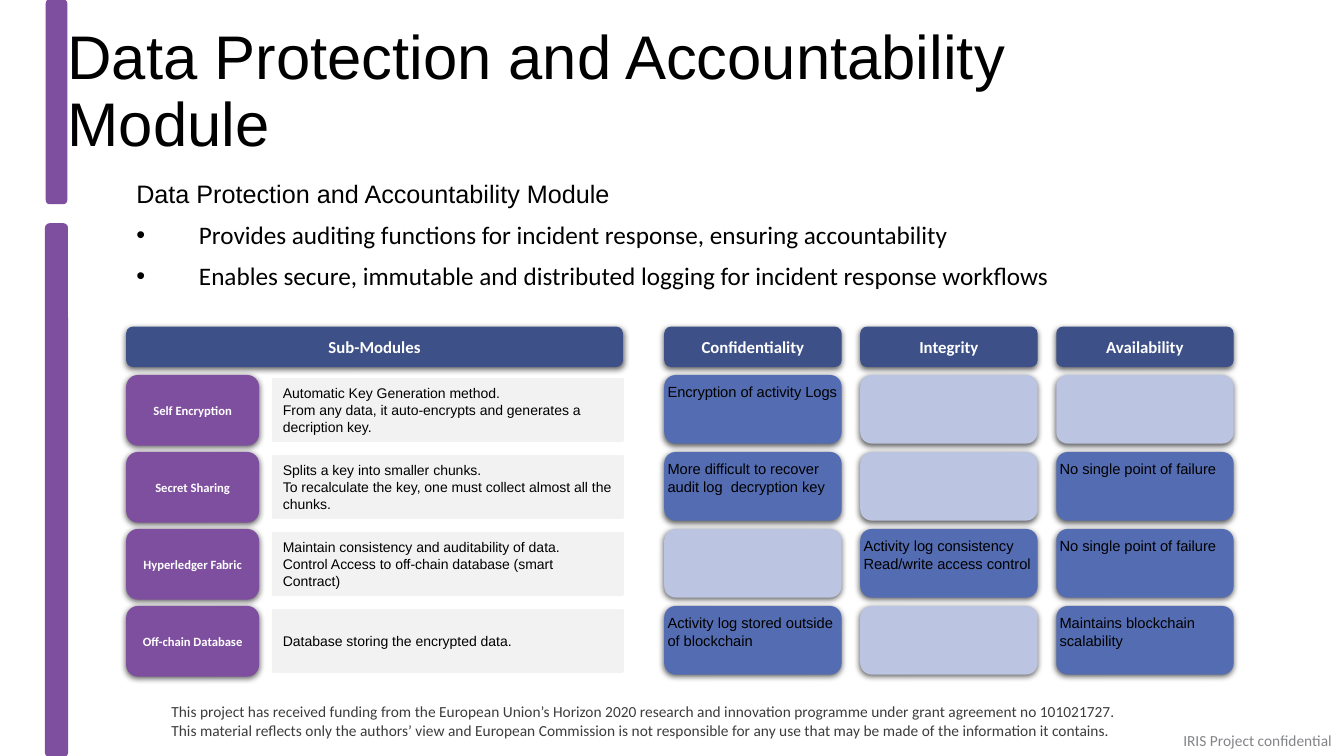
from lxml import etree
from pptx import Presentation
from pptx.dml.color import RGBColor
from pptx.enum.shapes import MSO_SHAPE
from pptx.enum.text import MSO_ANCHOR, MSO_AUTO_SIZE, PP_ALIGN
from pptx.oxml.ns import qn
from pptx.util import Cm, Pt

ROUNDED, RECT = MSO_SHAPE.ROUNDED_RECTANGLE, MSO_SHAPE.RECTANGLE
TOP, MIDDLE = MSO_ANCHOR.TOP, MSO_ANCHOR.MIDDLE
LEFT, CENTER = PP_ALIGN.LEFT, PP_ALIGN.CENTER
NO_FIT = MSO_AUTO_SIZE.NONE

PURPLE = RGBColor(0x7F, 0x4F, 0x9F)
NAVY = RGBColor(0x3D, 0x50, 0x87)
BLUE = RGBColor(0x54, 0x6C, 0xB2)
PALE_BLUE = RGBColor(0xBB, 0xC4, 0xE0)
PALE_GREY = RGBColor(0xF2, 0xF2, 0xF2)
DARK_GREY = RGBColor(0x3C, 0x3C, 0x3C)
GREY = RGBColor(0x83, 0x84, 0x87)
BLACK = RGBColor(0, 0, 0)
WHITE = RGBColor(0xFF, 0xFF, 0xFF)

TABLE_LEFT, HEADER_TOP, HEADER_HEIGHT = 3.18, 8.23, 1.02
ROW_TOP, ROW_STEP = 9.45, 1.94
GOAL_LEFT, GOAL_STEP, GOAL_WIDTH = 16.74, 4.94, 4.47

GOALS = ["Confidentiality", "Integrity", "Availability"]
MODULES = [
    ("Self Encryption",
     "Automatic Key Generation method.\n"
     "From any data, it auto-encrypts and generates a decription key.",
     ["Encryption of activity Logs", "", ""]),
    ("Secret Sharing",
     "Splits a key into smaller chunks.\n"
     "To recalculate the key, one must collect almost all the chunks.",
     ["More difficult to recover audit log  decryption key", "",
      "No single point of failure"]),
    ("Hyperledger Fabric",
     "Maintain consistency and auditability of data.\n"
     "Control Access to off-chain database (smart Contract)",
     ["", "Activity log consistency\nRead/write access control",
      "No single point of failure"]),
    ("Off-chain Database",
     "Database storing the encrypted data.",
     ["Activity log stored outside of blockchain", "",
      "Maintains blockchain scalability"]),
]


class SlideBuilder:
    heading_font = "Arial"
    label_font = "Calibri"

    def __init__(self, prs):
        self.s = prs.slides.add_slide(prs.slide_layouts[1])

    def place(self, sp, left, top, width, height):
        sp.left, sp.top, sp.width, sp.height = map(Cm, (left, top, width, height))

    def style(self, p, name, size, color, bold=False):
        for r in p.runs:
            r.font.name, r.font.size, r.font.bold = name, Pt(size), bold
            r.font.color.rgb = color

    def title(self, text, *box):
        sp = self.s.shapes.title
        self.place(sp, *box)
        tf = sp.text_frame
        tf.text = text
        tf.auto_size, tf.vertical_anchor = NO_FIT, MIDDLE
        tf.margin_left = tf.margin_right = tf.margin_top = tf.margin_bottom = 0
        p = tf.paragraphs[0]
        p.alignment, p.line_spacing = LEFT, 0.9
        self.style(p, self.heading_font, 44, BLACK)

    def body(self, heading, bullets, *box):
        sp = self.s.placeholders[1]
        self.place(sp, *box)
        tf = sp.text_frame
        tf.text = "\n".join([heading, *bullets])
        tf.auto_size, tf.vertical_anchor = NO_FIT, TOP
        for i, p in enumerate(tf.paragraphs):
            indent = Cm(1.58) if i else 0
            pPr = p._p.get_or_add_pPr()
            pPr.set("marL", str(indent))
            pPr.set("indent", str(-indent))
            if i:
                etree.SubElement(pPr, qn("a:buFont"), typeface="Arial")
                etree.SubElement(pPr, qn("a:buChar"), char="•")
            else:
                etree.SubElement(pPr, qn("a:buNone"))
            p.line_spacing = 0.9
            p.space_before = Pt(10 if i else 0)
            self.style(p, self.label_font if i else self.heading_font, 18, BLACK)

    def text(self, text, box, color, wrap=True):
        sp = self.s.shapes.add_textbox(0, 0, 0, 0)
        self.place(sp, *box)
        tf = sp.text_frame
        tf.word_wrap = wrap
        tf.text = text
        self.style(tf.paragraphs[0], self.label_font, 11, color)

    def shape(self, kind, box, fill, line=None):
        sp = self.s.shapes.add_shape(kind, 0, 0, 0, 0)
        self.place(sp, *box)
        sp.shadow.inherit = False
        sp.fill.solid()
        sp.fill.fore_color.rgb = fill
        if line:
            sp.line.color.rgb = fill
            sp.line.width = Pt(line)
        else:
            sp.line.fill.background()
        return sp

    def fill_text(self, sp, text, name, size, color, bold=False, align=LEFT, anchor=MIDDLE):
        tf = sp.text_frame
        tf.word_wrap = True
        tf.text = text
        tf.vertical_anchor = anchor
        for p in tf.paragraphs:
            p.alignment = align
            self.style(p, name, size, color, bold)

    def card(self, box, fill):
        sp = self.shape(ROUNDED, box, fill)
        effects = sp._element.spPr.find(qn("a:effectLst"))
        shadow = etree.SubElement(
            effects, qn("a:outerShdw"), blurRad=str(Pt(4.5)), dist=str(Pt(1.5)),
            dir="5400000", rotWithShape="0")
        color = etree.SubElement(shadow, qn("a:srgbClr"), val="000000")
        etree.SubElement(color, qn("a:alpha"), val="63000")
        return sp

    def label(self, text, box, fill, size):
        self.fill_text(self.card(box, fill), text, self.label_font, size, WHITE, True, CENTER)

    def description(self, text, box):
        sp = self.shape(RECT, box, PALE_GREY, 2)
        self.fill_text(sp, text, self.heading_font, 10, BLACK)

    def benefit(self, text, box):
        sp = self.card(box, BLUE if text else PALE_BLUE)
        if text:
            sp.text_frame.margin_left = sp.text_frame.margin_right = 0
            self.fill_text(sp, text, self.heading_font, 10.5, BLACK, anchor=TOP)


def main():
    prs = Presentation()
    prs.slide_width, prs.slide_height = Cm(33.87), Cm(19.05)
    b = SlideBuilder(prs)

    b.text("This project has received funding from the European Union’s Horizon 2020 "
           "research and innovation programme under grant agreement no 101021727. "
           "This material reflects only the authors’ view and European Commission is not "
           "responsible for any use that may be made of the information it contains.",
           (4.07, 17.58, 24.54, 1.12), DARK_GREY)
    b.text("IRIS Project confidential", (29.57, 18.31, 4.29, 0.72), GREY, wrap=False)
    b.shape(ROUNDED, (1.17, 5.66, 0.51, 13.39), PURPLE, 2)
    b.shape(ROUNDED, (1.17, 0, 0.51, 5.13), PURPLE, 1)

    b.title("Data Protection and Accountability Module", 1.7, 0.76, 26.26, 3.18)
    b.body("Data Protection and Accountability Module",
           ["Provides auditing functions for incident response, ensuring accountability",
            "Enables secure, immutable and distributed logging for incident response workflows"],
           TABLE_LEFT, 4.45, 28, 3.05)

    b.label("Sub-Modules", (TABLE_LEFT, HEADER_TOP, 12.52, HEADER_HEIGHT), NAVY, 12)
    goal_lefts = [GOAL_LEFT + i * GOAL_STEP for i in range(len(GOALS))]
    for left, goal in zip(goal_lefts, GOALS):
        b.label(goal, (left, HEADER_TOP, GOAL_WIDTH, HEADER_HEIGHT), NAVY, 12)

    for row, (module, description, benefits) in enumerate(MODULES):
        top = ROW_TOP + row * ROW_STEP
        b.label(module, (TABLE_LEFT, top, 3.35, 1.78), PURPLE, 9)
        b.description(description, (6.88, top + 0.1, 8.81, 1.55))
        for left, benefit in zip(goal_lefts, benefits):
            b.benefit(benefit, (left, top, GOAL_WIDTH, 1.73))

    prs.save("out.pptx")


if __name__ == "__main__":
    main()
